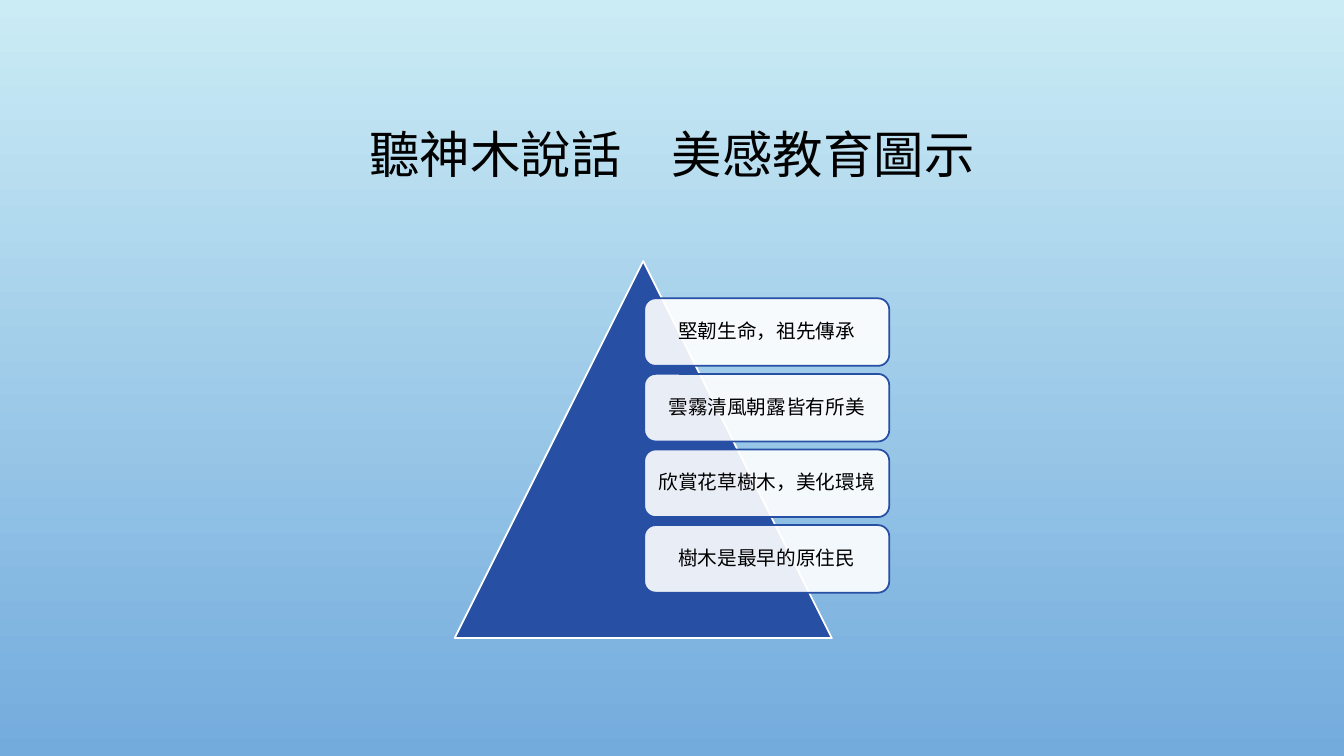
"""Build a slide with a triangle and four statements about listening to sacred trees."""
from lxml.etree import SubElement
from pptx import Presentation
from pptx.dml.color import RGBColor
from pptx.enum.shapes import MSO_SHAPE
from pptx.enum.text import MSO_ANCHOR, PP_ALIGN
from pptx.oxml.ns import qn
from pptx.util import Inches, Pt

SKY = RGBColor(0xCB, 0xEC, 0xF5)
HORIZON = RGBColor(0x73, 0xAB, 0xDD)
NAVY = RGBColor(0x27, 0x4F, 0xA4)
WHITE = RGBColor(0xFF, 0xFF, 0xFF)
BLACK = RGBColor(0x00, 0x00, 0x00)

TRIANGLE_LEFT, TRIANGLE_TOP, TRIANGLE_SIDE = 4.51, 2.59, 3.74
BOX_LEFT, BOX_TOP, BOX_WIDTH, BOX_HEIGHT = 6.39, 2.96, 2.43, 0.67
ROW_PITCH = 0.75
BOX_MARGIN = Inches(0.09)
STATEMENTS = [
    "堅韌生命，祖先傳承",
    "雲霧清風朝露皆有所美",
    "欣賞花草樹木，美化環境",
    "樹木是最早的原住民",
]


def write_text(shape, text, size):
    frame = shape.text_frame
    frame.word_wrap = True
    frame.vertical_anchor = MSO_ANCHOR.MIDDLE
    para = frame.paragraphs[0]
    para.alignment = PP_ALIGN.CENTER
    para.line_spacing = 0.9
    span = para.add_run()
    span.text = text
    span.font.size = Pt(size)
    span.font.name = "Cabin"
    span.font.color.rgb = BLACK


def add_outlined(shapes, kind, left, top, width, height, fill, line):
    shape = shapes.add_shape(kind, Inches(left), Inches(top), Inches(width), Inches(height))
    shape.shadow.inherit = False
    shape.fill.solid()
    shape.fill.fore_color.rgb = fill
    shape.line.color.rgb = line
    shape.line.width = Pt(1.25)
    return shape


deck = Presentation()
deck.slide_width, deck.slide_height = Inches(13.33), Inches(7.5)
page = deck.slides.add_slide(deck.slide_layouts.get_by_name("Title Only"))

backdrop = page.background.fill
backdrop.gradient()
backdrop.gradient_angle = 270
for stop, color in zip(backdrop.gradient_stops, (SKY, HORIZON)):
    stop.color.rgb = color

title = page.shapes.title
title.left, title.top = Inches(1), Inches(0.68)
title.width, title.height = Inches(11.33), Inches(1.75)
write_text(title, "聽神木說話　美感教育圖示", size=36)

diagram = page.shapes.add_group_shape().shapes
add_outlined(diagram, MSO_SHAPE.ISOSCELES_TRIANGLE, TRIANGLE_LEFT, TRIANGLE_TOP,
             TRIANGLE_SIDE, TRIANGLE_SIDE, fill=NAVY, line=WHITE)

for row, statement in enumerate(STATEMENTS):
    box = add_outlined(diagram, MSO_SHAPE.ROUNDED_RECTANGLE, BOX_LEFT, BOX_TOP + row * ROW_PITCH,
                       BOX_WIDTH, BOX_HEIGHT, fill=WHITE, line=NAVY)
    fill_color = box.fill._xPr.find(qn("a:solidFill"))[0]
    SubElement(fill_color, qn("a:alpha"), val="90000")
    frame = box.text_frame
    frame.margin_left = frame.margin_right = BOX_MARGIN
    frame.margin_top = frame.margin_bottom = BOX_MARGIN
    write_text(box, statement, size=14)

deck.save("out.pptx")
